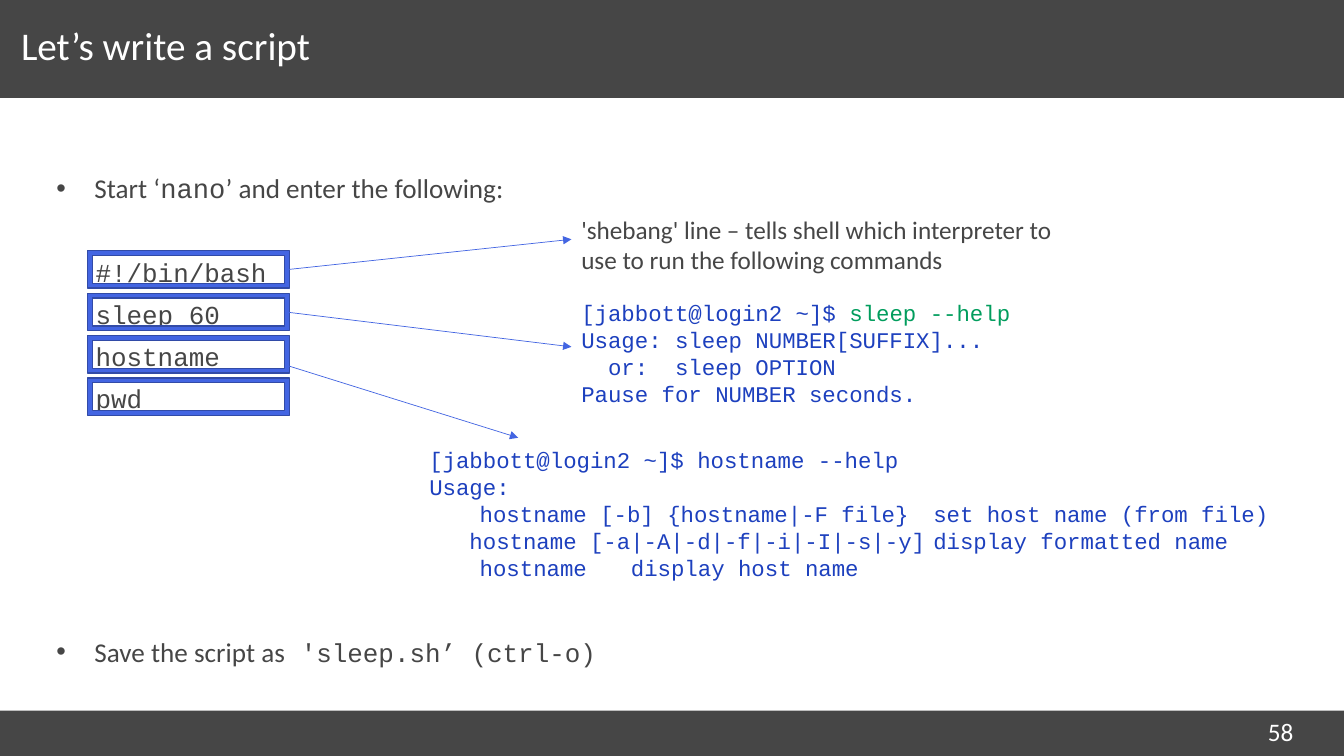
from dataclasses import dataclass

from lxml.etree import SubElement
from pptx import Presentation
from pptx.dml.color import RGBColor
from pptx.enum.dml import MSO_LINE
from pptx.enum.shapes import MSO_CONNECTOR, MSO_SHAPE
from pptx.enum.text import MSO_ANCHOR, MSO_AUTO_SIZE, PP_ALIGN
from pptx.oxml.ns import qn
from pptx.shapes.autoshape import Shape
from pptx.slide import Slide
from pptx.text.text import TextFrame, _Paragraph as Paragraph
from pptx.util import Cm, Pt


@dataclass(frozen=True)
class Theme:
    dark: str = "464646"
    white: str = "FFFFFF"
    accent: str = "4365E2"
    frame_edge: str = "324BA7"
    terminal: str = "1D40BE"
    command: str = "019D5D"
    sans: str = "Calibri"
    mono: str = "Courier New"
    title_size: float = 28
    bullet_size: float = 19.4
    code_size: float = 18.5
    note_size: float = 18
    terminal_size: float = 16


THEME = Theme()


@dataclass(frozen=True)
class Span:
    text: str
    size: float
    color: str = THEME.dark
    font: str = THEME.sans


@dataclass(frozen=True)
class Box:
    """A rectangle in centimetres."""
    left: float
    top: float
    width: float
    height: float

    def lengths(self) -> tuple[Cm, Cm, Cm, Cm]:
        return Cm(self.left), Cm(self.top), Cm(self.width), Cm(self.height)


@dataclass(frozen=True)
class BodyLine:
    spans: list[Span]
    space_before: float
    bullet: bool = False


@dataclass(frozen=True)
class TextBlock:
    box: Box
    lines: list[list[Span]]
    tabs: tuple[float, ...] = ()


@dataclass(frozen=True)
class Arrow:
    x1: float
    y1: float
    x2: float
    y2: float


def code(text: str) -> Span:
    return Span(text, THEME.code_size, font=THEME.mono)


def terminal(text: str, color: str = THEME.terminal) -> Span:
    return Span(text, THEME.terminal_size, color, THEME.mono)


def bullet_text(text: str, font: str = THEME.sans) -> Span:
    return Span(text, THEME.bullet_size, font=font)


BANDS = [Box(0, 17.91, 33.87, 1.14), Box(0, 0, 33.87, 2.47)]
TITLE_BOX = Box(0.53, 0.43, 29.26, 1.63)
BODY_BOX = Box(1.42, 4.31, 31, 13.1)
FIRST_FRAME = Box(2.21, 6.32, 5.08, 0.94)
FRAME_PITCH = 1.07
SCRIPT = ["#!/bin/bash", "sleep 60", "hostname", "pwd"]

BODY = [
    BodyLine([bullet_text("Start ‘"), bullet_text("nano", THEME.mono),
              bullet_text("’ and enter the following:")], 0, bullet=True),
    *[BodyLine([code(line)], 6 if i else 36) for i, line in enumerate(SCRIPT)],
    BodyLine([bullet_text("Save the script as"), code(" 'sleep.sh’ (ctrl-o)")],
             157, bullet=True),
]

TEXT_BLOCKS = [
    TextBlock(Box(14.4, 5.28, 12.9, 1.8), [
        [Span("'shebang' line – tells shell which interpreter to use to run "
              "the following commands", THEME.note_size)]]),
    TextBlock(Box(14.4, 7.42, 15.39, 3), [
        [terminal("[jabbott@login2 ~]$ "), terminal("sleep --help", THEME.command)],
        [terminal("Usage: sleep NUMBER[SUFFIX]...")],
        [terminal("  or:  sleep OPTION")],
        [terminal("Pause for NUMBER seconds.")]]),
    TextBlock(Box(10.57, 11.13, 21.87, 3.68), [
        [terminal("[jabbott@login2 ~]$ hostname --help")],
        [terminal("Usage:")],
        [terminal("\thostname [-b] {hostname|-F file}\tset host name (from file)")],
        [terminal("   hostname [-a|-A|-d|-f|-i|-I|-s|-y]\tdisplay formatted name")],
        [terminal("\thostname\tdisplay host name")]], tabs=(1.27, 5.08, 12.7)),
    TextBlock(Box(31.7, 17.93, 1.78, 0.64),
              [[Span("58", THEME.note_size, THEME.white)]]),
]

ARROWS = [
    Arrow(7.27, 6.79, 14.4, 6.03),
    Arrow(7.27, 7.87, 14.4, 8.74),
    Arrow(7.27, 9.22, 13.06, 11.03),
]


def rgb(color: str) -> RGBColor:
    return RGBColor.from_string(color)


def add_spans(para: Paragraph, spans: list[Span]) -> None:
    for span in spans:
        run = para.add_run()
        run.text = span.text
        run.font.size = Pt(span.size)
        run.font.name = span.font
        run.font.color.rgb = rgb(span.color)


def next_paragraph(frame: TextFrame, index: int) -> Paragraph:
    return frame.add_paragraph() if index else frame.paragraphs[0]


def place(holder: Shape, box: Box) -> TextFrame:
    """Move a placeholder and give it the slide's side margins."""
    holder.left, holder.top, holder.width, holder.height = box.lengths()
    frame = holder.text_frame
    frame.margin_left = frame.margin_right = 0
    frame.auto_size = MSO_AUTO_SIZE.NONE
    frame.word_wrap = True
    return frame


def set_bullet(para: Paragraph, bullet: bool) -> None:
    props = para._p.get_or_add_pPr()
    props.set("marL", str(Cm(0.96 if bullet else 0.99)))
    props.set("indent", str(Cm(-0.96 if bullet else 0)))
    if bullet:
        color = SubElement(props, qn("a:buClr"))
        SubElement(color, qn("a:srgbClr"), val=THEME.dark)
        SubElement(props, qn("a:buChar"), char="•")
    else:
        SubElement(props, qn("a:buNone"))


def add_shape(page: Slide, kind: MSO_SHAPE, box: Box, fill: str) -> Shape:
    shape = page.shapes.add_shape(kind, *box.lengths())
    shape.shadow.inherit = False
    shape.fill.solid()
    shape.fill.fore_color.rgb = rgb(fill)
    shape.line.fill.background()
    return shape


def add_band(page: Slide, box: Box) -> None:
    """Draw a band behind the placeholders."""
    band = add_shape(page, MSO_SHAPE.RECTANGLE, box, THEME.dark)
    page.shapes._spTree.insert(2, band._element)


def fill_title(page: Slide) -> None:
    frame = place(page.shapes.title, TITLE_BOX)
    frame.vertical_anchor = MSO_ANCHOR.MIDDLE
    para = frame.paragraphs[0]
    para.alignment = PP_ALIGN.LEFT
    para.line_spacing = 0.8
    add_spans(para, [Span("Let’s write a script", THEME.title_size, THEME.white)])


def fill_body(page: Slide) -> None:
    frame = place(page.placeholders[1], BODY_BOX)
    for i, line in enumerate(BODY):
        para = next_paragraph(frame, i)
        set_bullet(para, line.bullet)
        para.line_spacing = Pt(20)
        para.space_before = Pt(line.space_before)
        para.space_after = Pt(4)
        add_spans(para, line.spans)


def add_code_frame(page: Slide, index: int) -> None:
    first = FIRST_FRAME
    box = Box(first.left, first.top + index * FRAME_PITCH, first.width, first.height)
    shape = add_shape(page, MSO_SHAPE.FRAME, box, THEME.accent)
    shape.line.color.rgb = rgb(THEME.frame_edge)
    shape.line.width = Pt(1)


def add_text_block(page: Slide, block: TextBlock) -> None:
    frame = page.shapes.add_textbox(*block.box.lengths()).text_frame
    frame.word_wrap = True
    for i, spans in enumerate(block.lines):
        para = next_paragraph(frame, i)
        if block.tabs:
            tab_list = SubElement(para._p.get_or_add_pPr(), qn("a:tabLst"))
            for stop in block.tabs:
                SubElement(tab_list, qn("a:tab"), pos=str(Cm(stop)), algn="l")
        add_spans(para, spans)


def add_arrow(page: Slide, arrow: Arrow) -> None:
    line = page.shapes.add_connector(MSO_CONNECTOR.STRAIGHT, Cm(arrow.x1),
                                     Cm(arrow.y1), Cm(arrow.x2), Cm(arrow.y2))
    line.line.color.rgb = rgb(THEME.accent)
    line.line.width = Pt(0.5)
    line.line.dash_style = MSO_LINE.SOLID
    SubElement(line.line._get_or_add_ln(), qn("a:tailEnd"), type="triangle")
    SubElement(line._element.spPr, qn("a:effectLst"))


def main() -> None:
    deck = Presentation()
    deck.slide_width, deck.slide_height = Cm(33.87), Cm(19.05)
    page = deck.slides.add_slide(deck.slide_layouts[1])
    for band in BANDS:
        add_band(page, band)
    fill_title(page)
    fill_body(page)
    for index in range(len(SCRIPT)):
        add_code_frame(page, index)
    for block in TEXT_BLOCKS:
        add_text_block(page, block)
    for arrow in ARROWS:
        add_arrow(page, arrow)
    deck.save("out.pptx")


if __name__ == "__main__":
    main()
